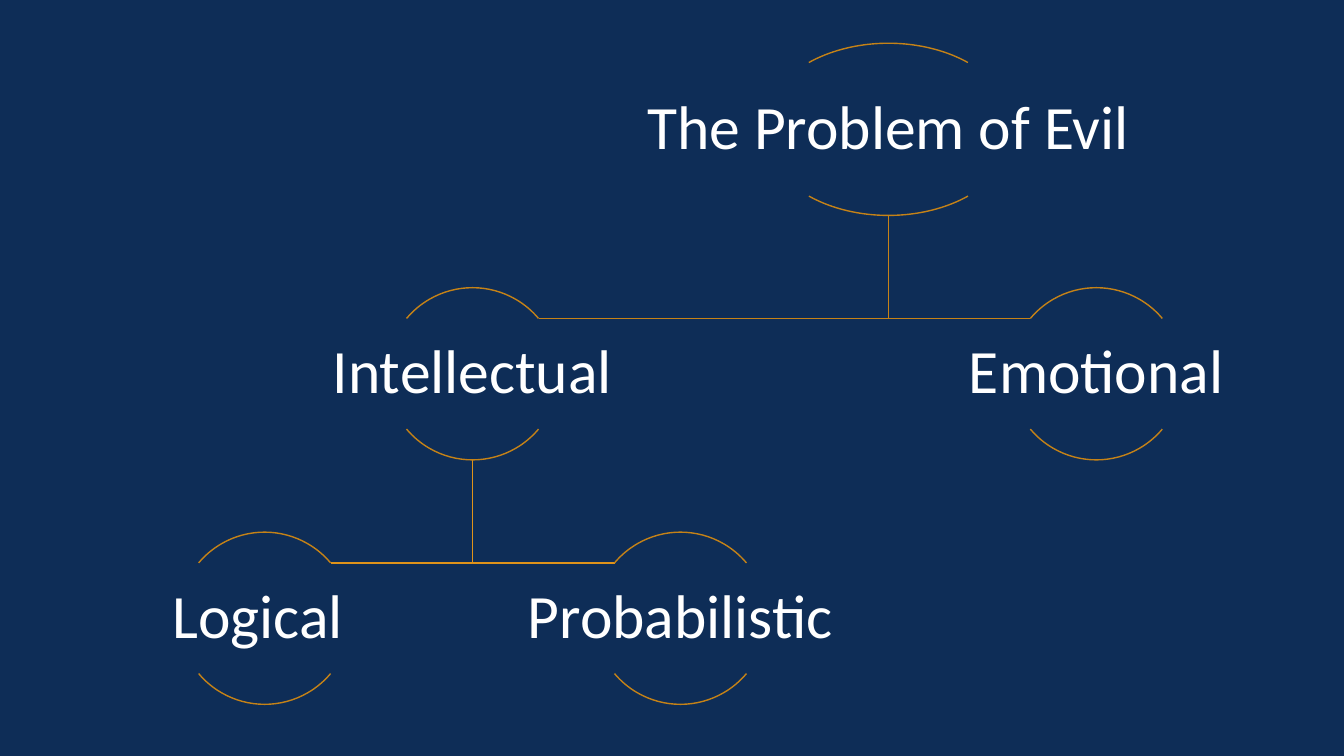
import math

from pptx import Presentation
from pptx import util as u
from pptx.dml.color import RGBColor
from pptx.enum import shapes, text

COLORS = {
    "background": "0E2D57",
    "text": "FFFFFF",
    "upper": "C58217",
    "lower": "DF931A",
}
FRAME_FORMAT = {
    "word_wrap": True,
    "auto_size": text.MSO_AUTO_SIZE.NONE,
    "vertical_anchor": text.MSO_ANCHOR.MIDDLE,
    "margin_left": u.Cm(0.08),
    "margin_right": u.Cm(0.08),
    "margin_top": u.Cm(0.08),
    "margin_bottom": u.Cm(0.08),
}
PARAGRAPH_FORMAT = {"alignment": text.PP_ALIGN.CENTER, "line_spacing": 0.9}
FONT_FORMAT = {"name": "Calibri", "size": u.Pt(44)}

COLUMN_LEFT, COLUMN_STEP = 6.67, 5.24
LEVEL_TOP, LEVEL_STEP = 1.09, 6.16
RING_HEIGHT = 4.34
LABEL_HEIGHT = 2.77
ARC_ANGLES = [(132, 192), (24, 84)]
JOIN_ANGLE = math.radians(40)

NODES = {
    "The Problem of Evil": {"column": 3, "level": 0, "ring": 6.35, "label": 12.7},
    "Intellectual": {"column": 1, "level": 1},
    "Logical ": {"column": 0, "level": 2},
    "Probabilistic": {"column": 2, "level": 2},
    "Emotional": {"column": 4, "level": 1},
}
BRANCHES = [
    ("The Problem of Evil", "Emotional", "upper"),
    ("Intellectual", "Probabilistic", "lower"),
    ("Intellectual", "Logical ", "lower"),
    ("The Problem of Evil", "Intellectual", "upper"),
]


def apply_format(target, values):
    for name, value in values.items():
        setattr(target, name, value)


def node_position(name):
    node = NODES[name]
    center = COLUMN_LEFT + node["column"] * COLUMN_STEP
    top = LEVEL_TOP + node["level"] * LEVEL_STEP
    return center, top


class TreeSlide:
    def __init__(self, presentation):
        self.slide = presentation.slides.add_slide(presentation.slide_layouts[5])
        fill = self.slide.background.fill
        fill.solid()
        fill.fore_color.rgb = self.color("background")

    def color(self, name):
        return RGBColor.from_string(COLORS[name])

    def outline(self, shape, color):
        shape.shadow.inherit = False
        shape.fill.background()
        shape.line.color.rgb = self.color(color)
        shape.line.width = u.Pt(1)

    def branch(self, parent, child, color):
        start, parent_top = node_position(parent)
        end, child_top = node_position(child)
        radius = RING_HEIGHT / 2
        side = math.copysign(radius * math.cos(JOIN_ANGLE), start - end)
        elbow = child_top + radius * (1 - math.sin(JOIN_ANGLE))
        points = [(start, parent_top + RING_HEIGHT), (start, elbow), (end + side, elbow)]
        corners = [(u.Cm(x), u.Cm(y)) for x, y in points]
        builder = self.slide.shapes.build_freeform(*corners[0])
        builder.add_line_segments(corners[1:], close=False)
        self.outline(builder.convert_to_shape(), color)

    def ring(self, name):
        center, top = node_position(name)
        width = NODES[name].get("ring", RING_HEIGHT)
        for angles in ARC_ANGLES:
            arc = self.slide.shapes.add_shape(
                shapes.MSO_SHAPE.ARC,
                u.Cm(center - width / 2), u.Cm(top), u.Cm(width), u.Cm(RING_HEIGHT),
            )
            for index, angle in enumerate(angles):
                arc.adjustments[index] = angle
            self.outline(arc, "upper")

    def label(self, name):
        center, top = node_position(name)
        width = NODES[name].get("label", 8.66)
        if NODES[name]["level"] == 0:
            shape = self.slide.shapes.title
        else:
            shape = self.slide.shapes.add_textbox(0, 0, 0, 0)
        apply_format(shape, {
            "left": u.Cm(center - width / 2),
            "top": u.Cm(top + (RING_HEIGHT - LABEL_HEIGHT) / 2),
            "width": u.Cm(width),
            "height": u.Cm(LABEL_HEIGHT),
        })
        apply_format(shape.text_frame, FRAME_FORMAT)
        paragraph = shape.text_frame.paragraphs[0]
        apply_format(paragraph, PARAGRAPH_FORMAT)
        run = paragraph.add_run()
        run.text = name
        apply_format(run.font, FONT_FORMAT)
        run.font.color.rgb = self.color("text")


def main():
    presentation = Presentation()
    presentation.slide_width = u.Cm(33.87)
    presentation.slide_height = u.Cm(19.05)
    tree = TreeSlide(presentation)
    for branch in BRANCHES:
        tree.branch(*branch)
    for name in NODES:
        tree.ring(name)
        tree.label(name)
    presentation.save("out.pptx")


if __name__ == "__main__":
    main()
